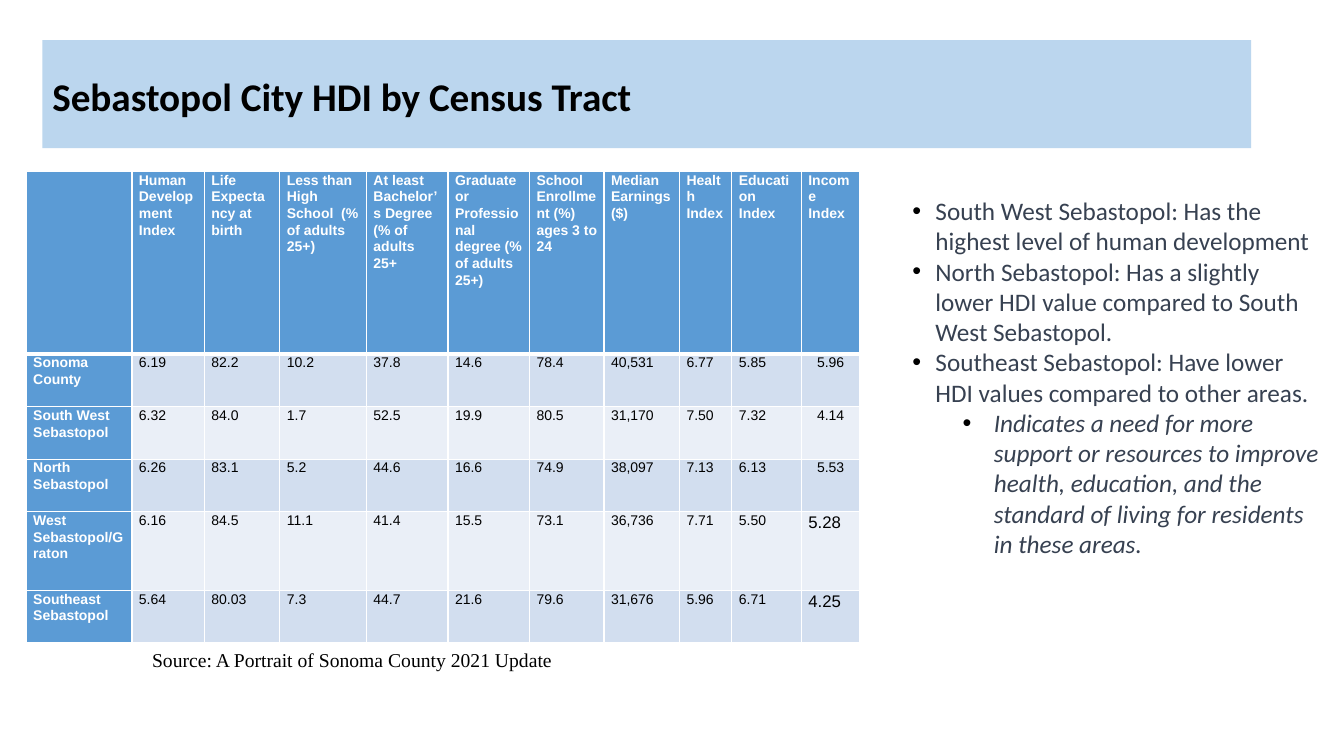
from dataclasses import dataclass

from lxml.etree import SubElement
from pptx import Presentation
from pptx.dml.color import RGBColor as RGB
from pptx.enum.shapes import MSO_SHAPE as Shape
from pptx.enum.text import MSO_ANCHOR as Anchor, MSO_AUTO_SIZE as AutoSize, PP_ALIGN as Align
from pptx.oxml import parse_xml
from pptx.oxml.ns import nsdecls, qn
from pptx.util import Inches, Pt


@dataclass(frozen=True)
class Theme:
    banner: str = "BBD6EE"
    header: str = "5B9BD5"
    bands: tuple = ("D2DEEF", "EAEFF7")
    white: str = "FFFFFF"
    black: str = "000000"
    note: str = "374151"
    heading_font: str = "Calibri"
    table_font: str = "Arial"
    source_font: str = "Times New Roman"
    title_size: int = 28
    note_size: int = 18
    source_size: int = 14
    large_cell_size: int = 12
    cell_size: int = 10
    border: int = 1
    header_border: int = 3


THEME = Theme()
SLIDE_SIZE = Inches(13.33), Inches(7.5)

# Left, top, width and height as percentages of the slide
TITLE_AREA = 3.15, 5.33, 89.95, 14.27
TABLE_AREA = 1.95, 22.67, 62.04, 62.4
SOURCE_AREA = 10.58, 85.07, 31.66, 4.53
NOTES_AREA = 67.14, 25.2, 32.03, 62.4

# Relative sizes, shared out over the table area
COLUMN_WEIGHTS = 105, 72, 75, 86, 81, 81, 74, 75, 52, 69, 58
ROW_WEIGHTS = 181, 52, 52, 52, 78, 52

HEADERS = (
    "", "Human Development Index", "Life Expectancy at birth",
    "Less than High School  (% of adults 25+)",
    "At least Bachelor’s Degree (% of adults 25+",
    "Graduate or Professional degree (% of adults 25+)",
    "School Enrollment (%) ages 3 to 24", "Median Earnings($)",
    "Health Index", "Education Index", "Income Index",
)
TRACTS = (
    ("Sonoma County", "6.19", "82.2", "10.2", "37.8", "14.6", "78.4", "40,531", "6.77", "5.85", "5.96"),
    ("South West Sebastopol", "6.32", "84.0", "1.7", "52.5", "19.9", "80.5", "31,170", "7.50", "7.32", "4.14"),
    ("North Sebastopol", "6.26", "83.1", "5.2", "44.6", "16.6", "74.9", "38,097", "7.13", "6.13", "5.53"),
    ("West Sebastopol/Graton", "6.16", "84.5", "11.1", "41.4", "15.5", "73.1", "36,736", "7.71", "5.50", "5.28"),
    ("Southeast Sebastopol", "5.64", "80.03", "7.3", "44.7", "21.6", "79.6", "31,676", "5.96", "6.71", "4.25"),
)
LARGE_INCOME_ROWS = 4, 5

# Text, left margin and hanging indent in inches, italic
NOTES = (
    ("South West Sebastopol: Has the highest level of human development", 0.23, 0.23, False),
    ("North Sebastopol: Has a slightly lower HDI value compared to South West Sebastopol.", 0.23, 0.23, False),
    ("Southeast Sebastopol: Have lower HDI values compared to other areas.", 0.23, 0.23, False),
    ("Indicates a need for more support or resources to improve health, education, and the "
     "standard of living for residents in these areas.", 0.81, 0.31, True),
)


def place(area):
    """Turn percentages of the slide into lengths."""
    return [round(SLIDE_SIZE[i % 2] * share / 100) for i, share in enumerate(area)]


def add_run(paragraph, text, font, size, color, bold=False, italic=False):
    run = paragraph.add_run()
    run.text = text
    run.font.name = font
    run.font.size = Pt(size)
    run.font.bold = bold
    run.font.italic = italic
    run.font.color.rgb = RGB.from_string(color)


def space_lines(paragraph):
    paragraph.line_spacing = 1.07
    paragraph.space_after = Pt(8)


def add_title(slide, text):
    banner = slide.shapes.add_shape(Shape.RECTANGLE, *place(TITLE_AREA))
    banner.shadow.inherit = False
    banner.fill.solid()
    banner.fill.fore_color.rgb = RGB.from_string(THEME.banner)
    banner.line.fill.background()
    banner.text_frame.vertical_anchor = Anchor.MIDDLE
    banner.text_frame.word_wrap = True
    paragraph = banner.text_frame.paragraphs[0]
    paragraph.alignment = Align.LEFT
    space_lines(paragraph)
    add_run(paragraph, text, THEME.heading_font, THEME.title_size, THEME.black, bold=True)


def set_borders(cell, top, bottom):
    widths = {"L": THEME.border, "R": THEME.border, "T": top, "B": bottom}
    properties = cell._tc.get_or_add_tcPr()
    for position, (side, width) in enumerate(widths.items()):
        properties.insert(position, parse_xml(
            f'<a:ln{side} {nsdecls("a")} w="{Pt(width)}"><a:solidFill>'
            f'<a:srgbClr val="{THEME.white}"/></a:solidFill></a:ln{side}>'))


def fill_cell(cell, text, row, column):
    is_header = row == 0 or column == 0
    is_income = column == len(HEADERS) - 1 and row > 0
    is_large = is_income and row in LARGE_INCOME_ROWS
    cell.margin_left = cell.margin_right = Inches(0.07)
    cell.margin_top = cell.margin_bottom = 0
    cell.fill.solid()
    color = THEME.header if is_header else THEME.bands[(row - 1) % 2]
    cell.fill.fore_color.rgb = RGB.from_string(color)
    set_borders(cell,
                top=THEME.header_border if row == 1 else THEME.border,
                bottom=THEME.header_border if row == 0 else THEME.border)
    if not text:
        return
    paragraph = cell.text_frame.paragraphs[0]
    space_lines(paragraph)
    if is_income and not is_large:
        paragraph.alignment = Align.CENTER
    add_run(paragraph, text, THEME.table_font,
            THEME.large_cell_size if is_large else THEME.cell_size,
            THEME.white if is_header else THEME.black, bold=is_header)


def share_out(items, weights, attribute, total):
    """Divide a total length among columns or rows by weight."""
    for item, weight in zip(items, weights):
        setattr(item, attribute, round(total * weight / sum(weights)))


def add_tract_table(slide):
    rows = (HEADERS, *TRACTS)
    left, top, width, height = place(TABLE_AREA)
    table = slide.shapes.add_table(len(rows), len(HEADERS), left, top, width, height).table
    share_out(table.columns, COLUMN_WEIGHTS, "width", width)
    share_out(table.rows, ROW_WEIGHTS, "height", height)
    for row, texts in enumerate(rows):
        for column, text in enumerate(texts):
            fill_cell(table.cell(row, column), text, row, column)


def add_text_frame(slide, area, wrap):
    frame = slide.shapes.add_textbox(*place(area)).text_frame
    frame.word_wrap = wrap
    frame.auto_size = AutoSize.SHAPE_TO_FIT_TEXT
    return frame


def add_source(slide, text):
    frame = add_text_frame(slide, SOURCE_AREA, wrap=False)
    add_run(frame.paragraphs[0], text, THEME.source_font, THEME.source_size, THEME.black)


def set_bullet(paragraph, margin, hanging):
    properties = paragraph._p.get_or_add_pPr()
    properties.set("marL", str(Inches(margin)))
    properties.set("indent", str(-Inches(hanging)))
    color = SubElement(properties, qn("a:buClr"))
    SubElement(color, qn("a:srgbClr"), val=THEME.black)
    SubElement(properties, qn("a:buFont"), typeface=THEME.table_font)
    SubElement(properties, qn("a:buChar"), char="•")


def add_notes(slide):
    frame = add_text_frame(slide, NOTES_AREA, wrap=True)
    for index, (text, margin, hanging, italic) in enumerate(NOTES):
        paragraph = frame.add_paragraph() if index else frame.paragraphs[0]
        paragraph.level = int(italic)
        set_bullet(paragraph, margin, hanging)
        add_run(paragraph, text, THEME.heading_font, THEME.note_size, THEME.note, italic=italic)


def main():
    presentation = Presentation()
    presentation.slide_width, presentation.slide_height = SLIDE_SIZE
    slide = presentation.slides.add_slide(presentation.slide_layouts[6])
    add_title(slide, "Sebastopol City HDI by Census Tract")
    add_tract_table(slide)
    add_source(slide, "Source: A Portrait of Sonoma County 2021 Update")
    add_notes(slide)
    presentation.save("out.pptx")


if __name__ == "__main__":
    main()
